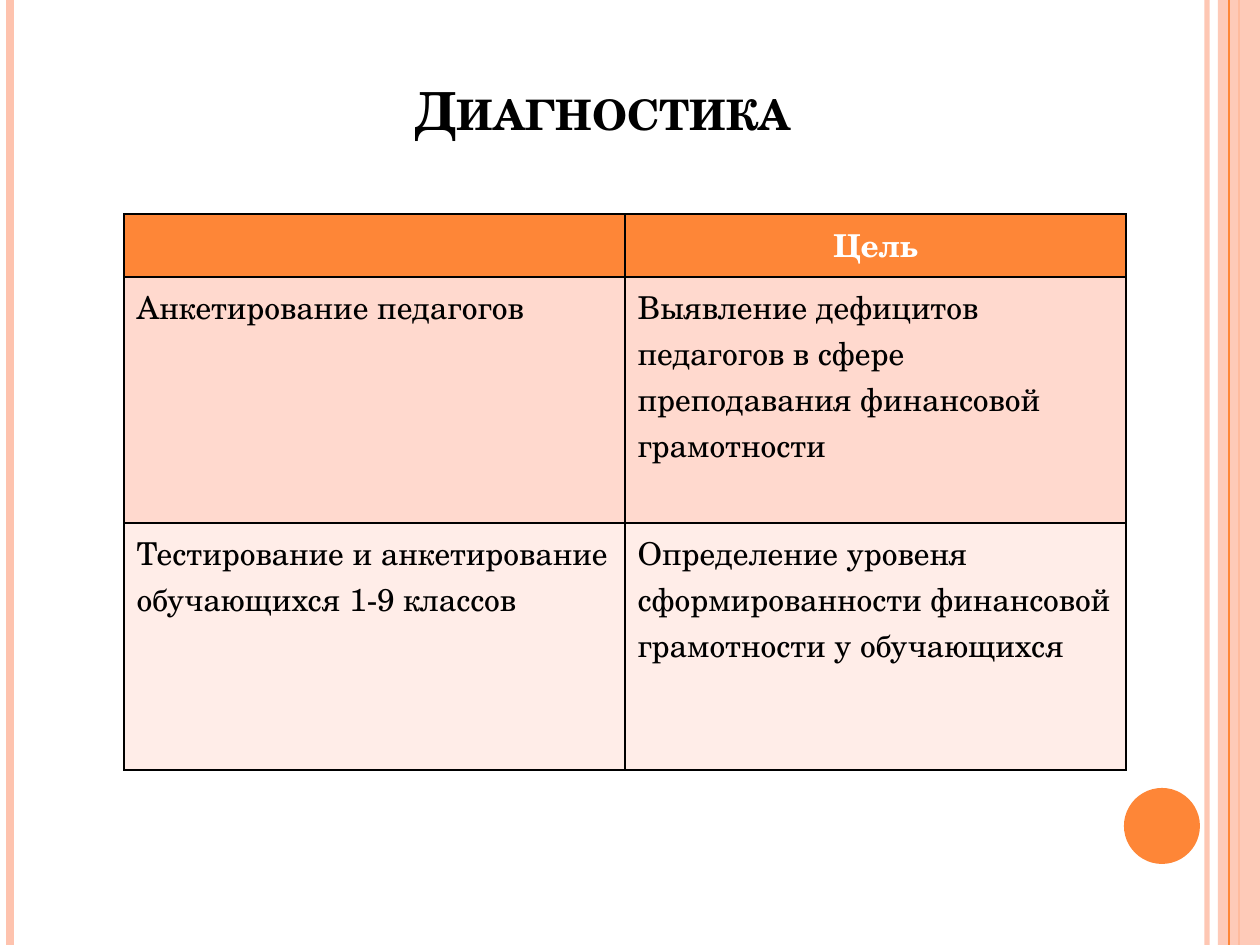
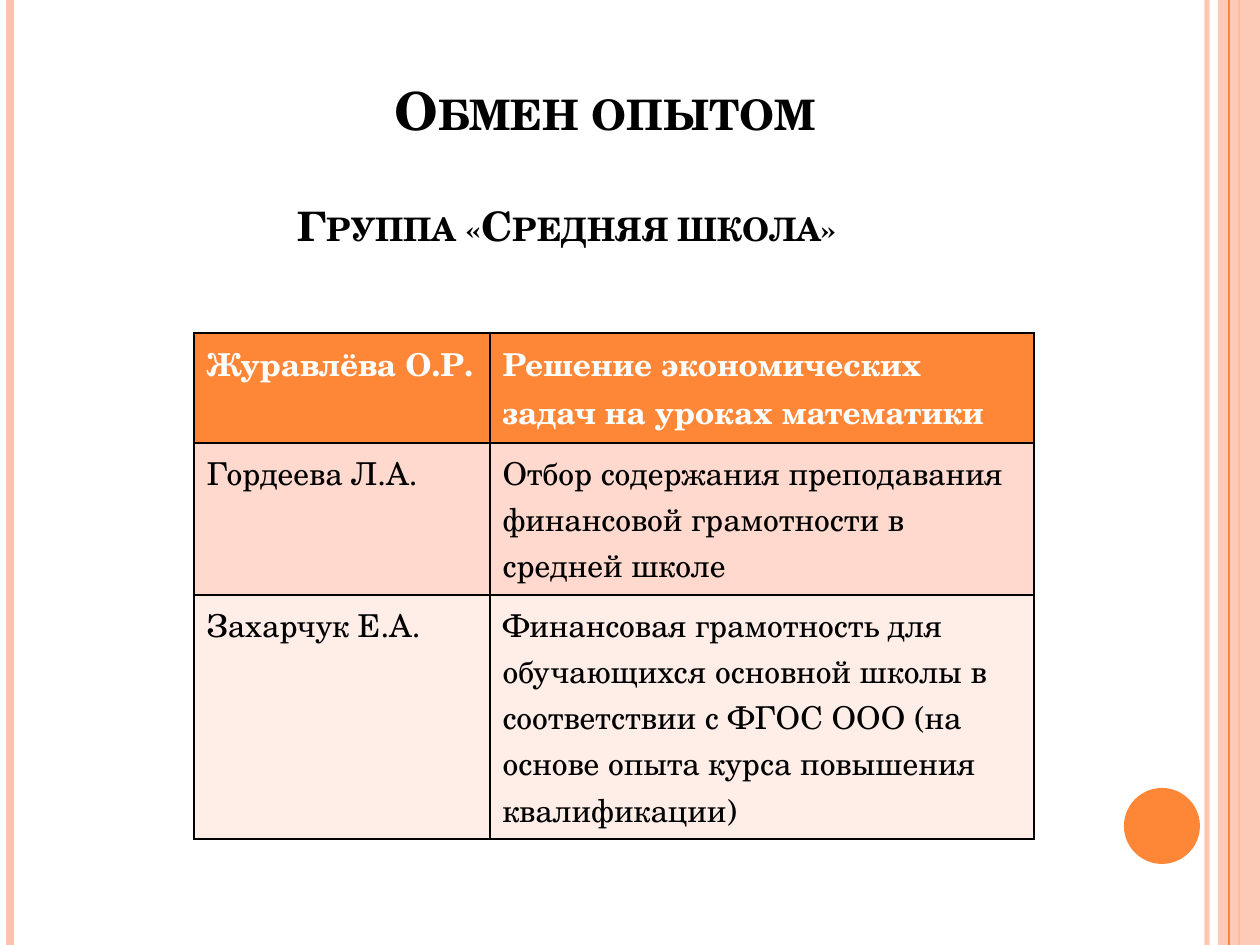
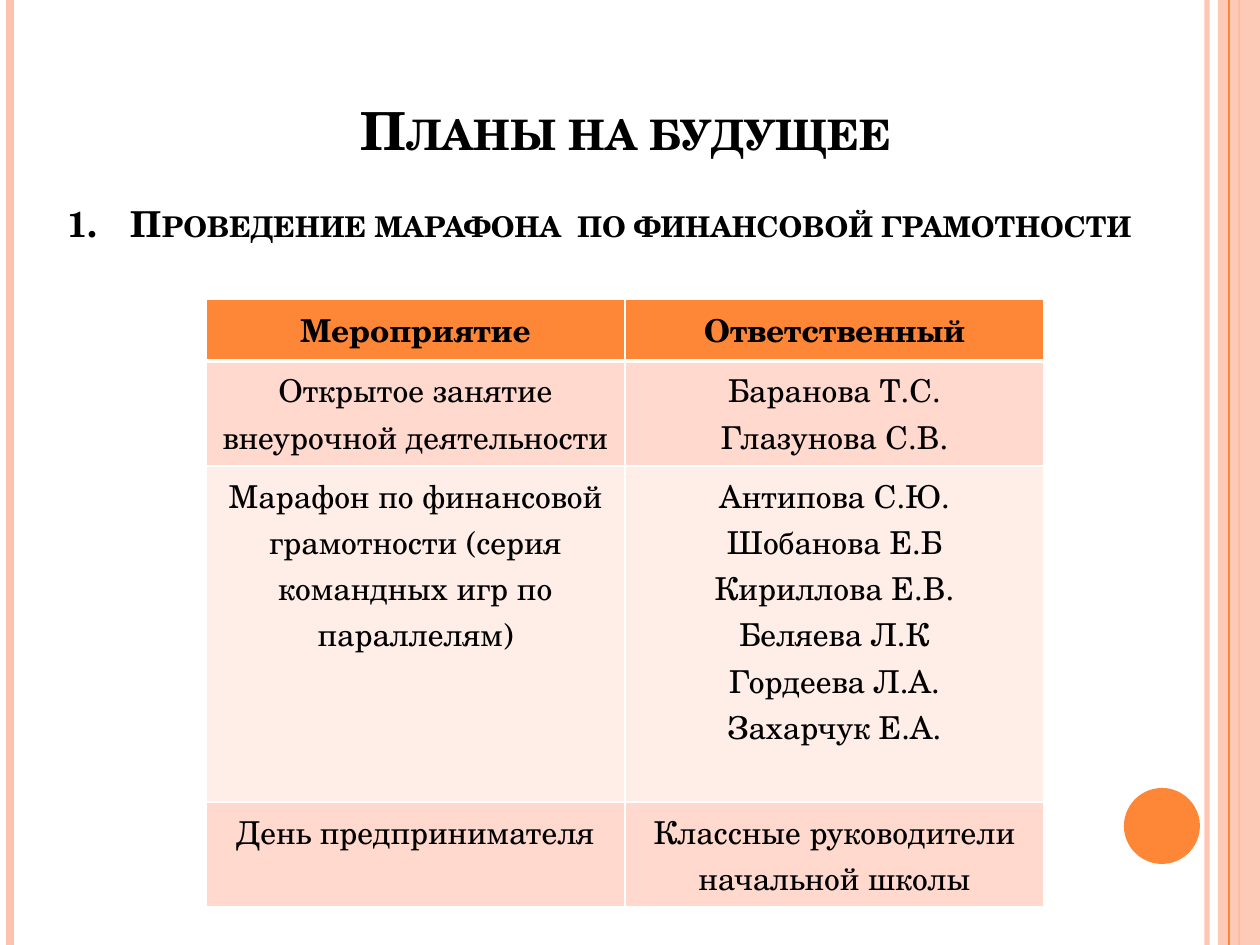
from lxml import etree
from pptx import Presentation
from pptx import util as u
from pptx.dml.color import RGBColor
from pptx.enum import shapes, text
from pptx.oxml.ns import qn

FONT = "TeX Gyre Schola"
BLACK, WHITE = "000000", "FFFFFF"
ORANGE, PEACH = "FE8637", "FEC3AE"
BANDS = ["FFD9CE", "FFEDE8"]
LEFT, MID = text.PP_ALIGN.LEFT, text.PP_ALIGN.CENTER

# x, colour, points, opacity in percent
LINES = [(1207, PEACH, 3, 93), (10, PEACH, 4.5, 100),
         (1239, ORANGE, 1.5, 100), (1229, ORANGE, 0.75, 100)]
STRIP = (1218, 0, 42, 945)
DISC = (1124, 788, 76, 76)

# Boxes are left, top, width, height; a cell holds one paragraph per line
SLIDES = [
    dict(title=("Диагностика", (403, 66, 486, 81), LEFT),
         at=(124, 214), cols=[501, 501], rows=[63, 246, 247],
         head=WHITE, edge=BLACK, rule=1, aligns=(MID, LEFT),
         cells=[("", "Цель"),
                ("Анкетирование педагогов",
                 "Выявление дефицитов педагогов в сфере преподавания "
                 "финансовой грамотности"),
                ("Тестирование и анкетирование обучающихся 1-9 классов",
                 "Определение уровеня сформированности финансовой "
                 "грамотности у обучающихся")]),
    dict(title=("Обмен опытом", (382, 66, 466, 81), LEFT),
         sub=("Группа «Средняя школа»", (285, 175, 635, 81), LEFT, 23.2),
         at=(194, 333), cols=[296, 544], rows=[110, 152, 244],
         head=WHITE, edge=BLACK, rule=1, aligns=(LEFT, LEFT),
         cells=[("Журавлёва О.Р.",
                 "Решение экономических задач на уроках математики"),
                ("Гордеева Л.А.",
                 "Отбор содержания преподавания финансовой грамотности "
                 "в средней школе"),
                ("Захарчук Е.А.",
                 "Финансовая грамотность для обучающихся основной школы "
                 "в соответствии с ФГОС ООО (на основе опыта курса "
                 "повышения квалификации)")]),
    dict(title=("Планы на будущее", (125, 86, 1002, 81), MID),
         sub=("Проведение марафона  по финансовой грамотности",
              (54, 170, 1091, 81), MID, 20.4),
         number=True,
         at=(206, 299), cols=[419, 419], rows=[62, 105, 336, 105],
         head=BLACK, edge=WHITE, rule=3, aligns=(MID, MID),
         cells=[("Мероприятие", "Ответственный"),
                ("Открытое занятие внеурочной деятельности",
                 "Баранова Т.С.\nГлазунова С.В."),
                ("Марафон по финансовой грамотности "
                 "(серия командных игр по параллелям)",
                 "Антипова С.Ю.\nШобанова Е.Б\nКириллова Е.В.\n"
                 "Беляева Л.К\nГордеева Л.А.\nЗахарчук Е.А."),
                ("День предпринимателя",
                 "Классные руководители\nначальной школы")]),
]


def px(n):
    return u.Emu(round(n * 914400 / 126))


def box(vals):
    return [px(n) for n in vals]


def rgb(code):
    return RGBColor.from_string(code)


def fade(shape, pct):
    """Set the opacity of a shape's first colour."""
    tone = next(shape.element.iter(qn("a:srgbClr")))
    etree.SubElement(tone, qn("a:alpha"), val=str(pct * 1000))


def style(frame, size, color, bold, align):
    for para in frame.paragraphs:
        para.alignment = align
        for run in para.runs:
            font = run.font
            font.name, font.size, font.bold = FONT, u.Pt(size), bold
            font.color.rgb = rgb(color)


def heading(shape, words, align, size):
    """Fill a shape with bold small capitals that stand on its base."""
    frame = shape.text_frame
    frame.text = words
    frame.word_wrap = True
    frame.auto_size = text.MSO_AUTO_SIZE.NONE
    frame.vertical_anchor = text.MSO_ANCHOR.BOTTOM
    style(frame, size, BLACK, True, align)
    for props in shape.element.iter(qn("a:rPr")):
        props.set("cap", "small")
    return frame.paragraphs[0]


def number(para):
    props = para._p.get_or_add_pPr()
    props.set("marL", str(px(63)))
    props.set("indent", str(-px(63)))
    etree.SubElement(props, qn("a:buFont"), typeface="+mj-lt")
    etree.SubElement(props, qn("a:buAutoNum"), type="arabicPeriod")


def border(cell, side, color, width):
    line = etree.SubElement(cell._tc.get_or_add_tcPr(), qn("a:ln" + side),
                            w=str(u.Pt(width)))
    fill = etree.SubElement(line, qn("a:solidFill"))
    etree.SubElement(fill, qn("a:srgbClr"), val=color)


def grid(slide, data):
    cols, rows = data["cols"], data["rows"]
    area = box((*data["at"], sum(cols), sum(rows)))
    table = slide.shapes.add_table(len(rows), len(cols), *area).table
    table.first_row = table.horz_banding = False
    for col, wide in zip(table.columns, cols):
        col.width = px(wide)
    for i, (row, tall) in enumerate(zip(table.rows, rows)):
        row.height = px(tall)
        top = i == 0
        for cell, words in zip(row.cells, data["cells"][i]):
            cell.text = words
            style(cell.text_frame, 18, data["head"] if top else BLACK,
                  top, data["aligns"][0 if top else 1])
            for side in "LRTB":
                thick = (i, side) in [(0, "B"), (1, "T")]
                border(cell, side, data["edge"], data["rule"] if thick else 1)
            cell.fill.solid()
            cell.fill.fore_color.rgb = rgb(ORANGE if top else BANDS[(i - 1) % 2])


def frame_art(slide, layout):
    """Draw the side lines, strip and disc, then move them to the layout."""
    parts = []
    for x, color, width, pct in LINES:
        line = slide.shapes.add_connector(
            shapes.MSO_CONNECTOR.STRAIGHT, *box((x, 0, x, 945)))
        line.line.color.rgb = rgb(color)
        line.line.width = u.Pt(width)
        etree.SubElement(line.element.spPr, qn("a:effectLst"))
        fade(line, pct)
        parts.append(line)
    kinds = shapes.MSO_SHAPE
    for kind, area, color, pct in [(kinds.RECTANGLE, STRIP, PEACH, 87),
                                   (kinds.OVAL, DISC, ORANGE, 100)]:
        shape = slide.shapes.add_shape(kind, *box(area))
        shape.shadow.inherit = False
        shape.fill.solid()
        shape.fill.fore_color.rgb = rgb(color)
        shape.line.fill.background()
        fade(shape, pct)
        parts.append(shape)
    parts.insert(3, parts.pop(4))  # the strip lies under the last line
    for i, part in enumerate(parts):
        next(part.element.iter(qn("p:cNvPr"))).set("id", str(20 + i))
        layout.element.cSld.spTree.append(part.element)


def main():
    deck = Presentation()
    deck.slide_width, deck.slide_height = box((1260, 945))
    layout = deck.slide_layouts.get_by_name("Title Only")
    for i, data in enumerate(SLIDES):
        slide = deck.slides.add_slide(layout)
        if i == 0:
            frame_art(slide, layout)
        words, area, align = data["title"]
        title = slide.shapes.title
        title.left, title.top, title.width, title.height = box(area)
        heading(title, words, align, 30)
        if "sub" in data:
            words, area, align, size = data["sub"]
            para = heading(slide.shapes.add_textbox(*box(area)),
                           words, align, size)
            if data.get("number"):
                number(para)
        grid(slide, data)
    deck.save("out.pptx")


if __name__ == "__main__":
    main()
